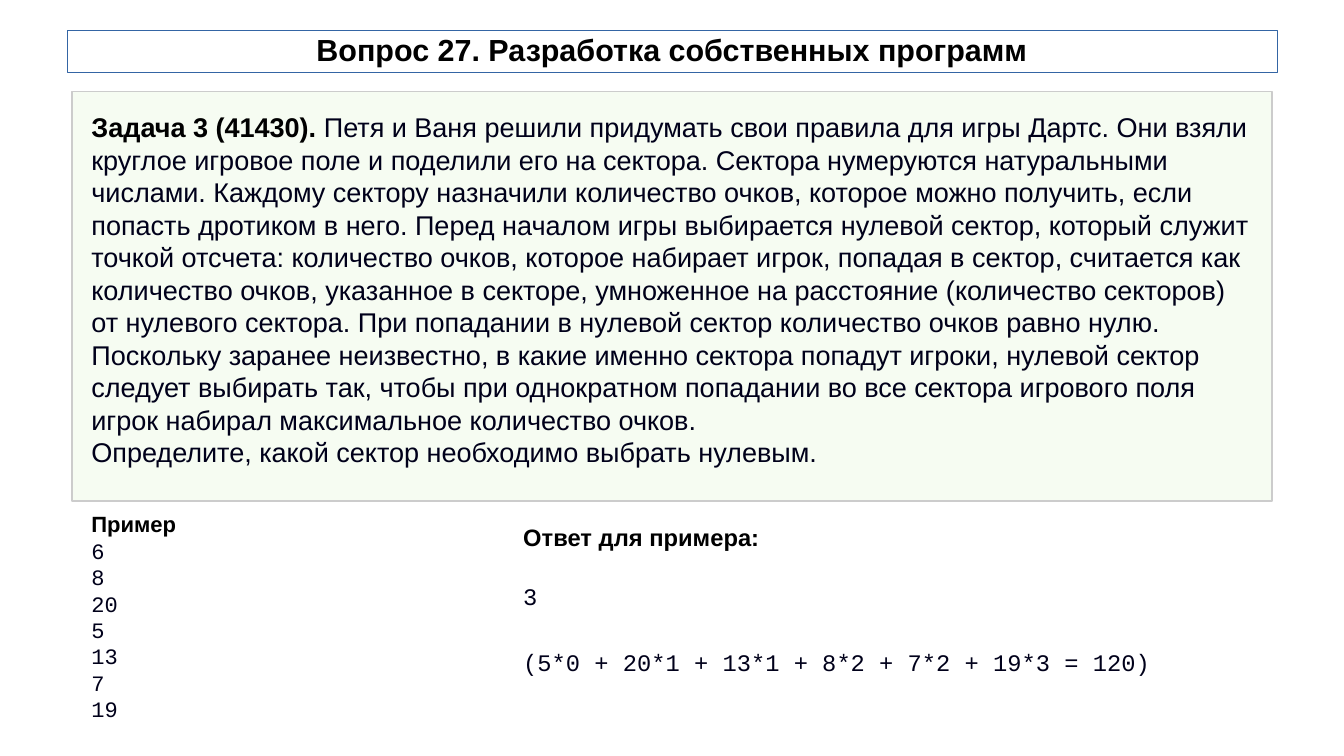
from pptx import Presentation
from pptx.dml.color import RGBColor
from pptx.enum.shapes import MSO_SHAPE as SHAPE
from pptx.enum.text import MSO_ANCHOR as ANCHOR, PP_ALIGN as ALIGN
from pptx.util import Inches, Pt

BLACK = RGBColor(0x00, 0x00, 0x00)
INK = RGBColor(0x00, 0x00, 0x1A)
WHITE = RGBColor(0xFF, 0xFF, 0xFF)
BLUE = RGBColor(0x34, 0x65, 0xA4)
GREY = RGBColor(0xCC, 0xCC, 0xCC)
MINT = RGBColor(0xF6, 0xFC, 0xF2)

TASK = [
    "Петя и Ваня решили придумать свои правила для игры Дартс. Они взяли круглое "
    "игровое поле и поделили его на сектора. Сектора нумеруются натуральными числами. "
    "Каждому сектору назначили количество очков, которое можно получить, если попасть "
    "дротиком в него. Перед началом игры выбирается нулевой сектор, который служит "
    "точкой отсчета: количество очков, которое набирает игрок, попадая в сектор, "
    "считается как количество очков, указанное в секторе, умноженное на расстояние "
    "(количество секторов) от нулевого сектора. При попадании в нулевой сектор "
    "количество очков равно нулю.",
    "Поскольку заранее неизвестно, в какие именно сектора попадут игроки, нулевой "
    "сектор следует выбирать так, чтобы при однократном попадании во все сектора "
    "игрового поля игрок набирал максимальное количество очков.",
    "Определите, какой сектор необходимо выбрать нулевым.",
]
SECTORS = [6, 8, 20, 5, 13, 7, 19]


class TaskSlide:
    sans, mono = "Arial", "Courier New"
    padding = 0.16
    leading = 1.2

    def __init__(self, prs):
        self.slide = prs.slides.add_slide(prs.slide_layouts[6])

    def panel(self, x, y, w, h, fill=None, line=None, line_width=0):
        """Add a rectangle and return its text frame."""
        sp = self.slide.shapes.add_shape(
            SHAPE.RECTANGLE, Inches(x), Inches(y), Inches(w), Inches(h))
        sp.shadow.inherit = False
        if fill is None:
            sp.fill.background()
        else:
            sp.fill.solid()
            sp.fill.fore_color.rgb = fill
        if line is None:
            sp.line.fill.background()
        else:
            sp.line.color.rgb = line
            sp.line.width = Pt(line_width)
        tf = sp.text_frame
        tf.word_wrap = True
        tf.vertical_anchor = ANCHOR.TOP
        tf.margin_left = tf.margin_right = Inches(self.padding)
        tf.margin_top = tf.margin_bottom = Inches(self.padding)
        return tf

    def run(self, p, text, size, bold=False, font=sans):
        r = p.add_run()
        r.text = text
        r.font.name = font
        r.font.size = Pt(size)
        r.font.bold = bold
        r.font.color.rgb = BLACK if bold else INK

    def paragraph(self, tf, size, text="", lead="", font=sans, before=0):
        """Write a paragraph that may open with a bold lead."""
        p = tf.paragraphs[0]
        if p.runs:
            p = tf.add_paragraph()
        p.alignment = ALIGN.LEFT
        p.line_spacing = Pt(size * self.leading)
        p.space_before = Pt(before)
        if lead:
            self.run(p, lead, size, bold=True)
        if text:
            self.run(p, text, size, font=font)

    def title(self, text):
        tf = self.panel(0.55, 0.25, 9.92, 0.34, line=BLUE, line_width=0.28)
        tf.vertical_anchor = ANCHOR.MIDDLE
        tf.margin_left = tf.margin_right = Inches(0.04)
        tf.margin_top = tf.margin_bottom = 0
        p = tf.paragraphs[0]
        p.alignment = ALIGN.CENTER
        p.line_spacing = 0.9
        self.run(p, text, 18, bold=True)

    def task(self, lead, paragraphs):
        tf = self.panel(0.59, 0.75, 9.84, 3.36, MINT, GREY)
        self.paragraph(tf, 16, paragraphs[0], lead)
        for text in paragraphs[1:]:
            self.paragraph(tf, 16, text)

    def example(self, heading, numbers):
        tf = self.panel(0.59, 4.03, 3.15, 2.17, WHITE)
        self.paragraph(tf, 13, lead=heading)
        for number in numbers:
            self.paragraph(tf, 13, str(number), font=self.mono)

    def answer(self, heading, value, check):
        tf = self.panel(4.13, 4.13, 5.51, 2.07, WHITE)
        self.paragraph(tf, 14, lead=heading)
        self.paragraph(tf, 14, value, font=self.mono, before=18)
        self.paragraph(tf, 14, check, font=self.mono, before=22)


def main():
    prs = Presentation()
    prs.slide_width, prs.slide_height = Inches(11.02), Inches(6.2)
    s = TaskSlide(prs)
    s.example("Пример", SECTORS)
    s.title("Вопрос 27. Разработка собственных программ")
    s.task("Задача 3 (41430). ", TASK)
    s.answer("Ответ для примера:", "3",
             "(5*0 + 20*1 + 13*1 + 8*2 + 7*2 + 19*3 = 120)")
    prs.save("out.pptx")


if __name__ == "__main__":
    main()
